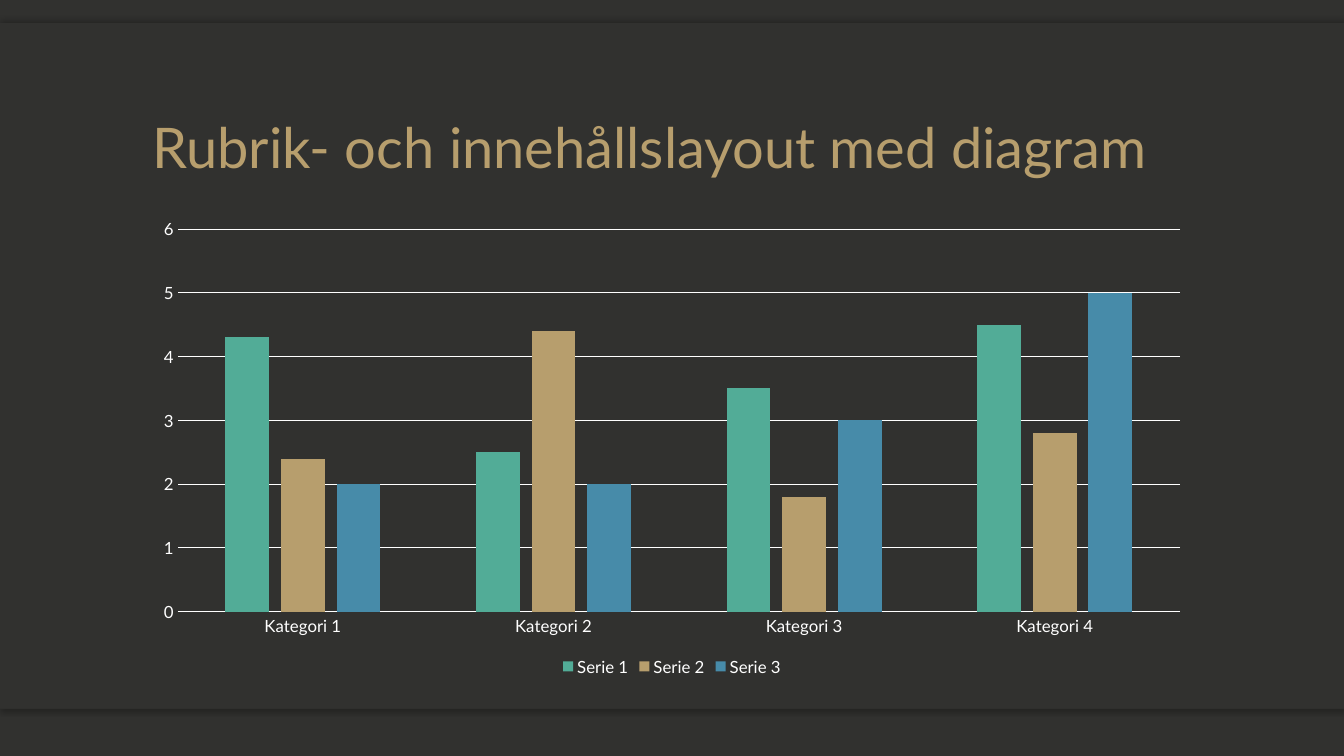
from lxml import etree
from pptx import Presentation
from pptx.chart.data import CategoryChartData
from pptx.dml.color import RGBColor
from pptx.enum.chart import XL_CHART_TYPE, XL_LEGEND_POSITION, XL_TICK_MARK
from pptx.enum.shapes import MSO_SHAPE
from pptx.enum.text import MSO_ANCHOR
from pptx.oxml.ns import qn
from pptx.util import Inches, Pt

TITLE = "Rubrik- och innehållslayout med diagram"
CATEGORIES = ["Kategori 1", "Kategori 2", "Kategori 3", "Kategori 4"]
SERIES = [
    ("Serie 1", (4.3, 2.5, 3.5, 4.5), "green"),
    ("Serie 2", (2.4, 4.4, 1.8, 2.8), "gold"),
    ("Serie 3", (2, 2, 3, 5), "blue"),
]
COLORS = {
    "background": "31312F", "shadow": "000000", "white": "FFFFFF",
    "green": "52AC97", "gold": "B79E6D", "blue": "478BA9",
}
FONT = "Lato"

SLIDE_WIDTH, SLIDE_HEIGHT = 13.33, 7.5
PANEL_TOP, PANEL_HEIGHT, EDGE_HEIGHT = 0.23, 6.8, 0.49
CONTENT_WIDTH = 10.5
CONTENT_LEFT = (SLIDE_WIDTH - CONTENT_WIDTH) / 2
# top, height, direction of the shadow in degrees
BANDS = [
    (PANEL_TOP + PANEL_HEIGHT - EDGE_HEIGHT, EDGE_HEIGHT, 90),
    (PANEL_TOP, EDGE_HEIGHT, 270),
    (PANEL_TOP, PANEL_HEIGHT, None),
]


def color(name):
    return RGBColor.from_string(COLORS[name])


def style_font(font, size, color_name):
    for key, value in {"name": FONT, "size": Pt(size)}.items():
        setattr(font, key, value)
    font.color.rgb = color(color_name)


def style_line(line, color_name):
    line.color.rgb = color(color_name)
    line.width = Pt(0.75)


def add_shadow(shape, direction):
    effects = shape._element.spPr.find(qn("a:effectLst"))
    shadow = etree.SubElement(
        effects, qn("a:outerShdw"), blurRad=str(Pt(4)), dist=str(Pt(2)),
        dir=str(direction * 60000), algn="ctr", rotWithShape="0")
    tone = etree.SubElement(shadow, qn("a:srgbClr"), val=COLORS["shadow"])
    etree.SubElement(tone, qn("a:alpha"), val="25000")


def add_bands(slide):
    for top, height, direction in BANDS:
        band = slide.shapes.add_shape(
            MSO_SHAPE.RECTANGLE, 0, Inches(top), Inches(SLIDE_WIDTH), Inches(height))
        band.fill.solid()
        band.fill.fore_color.rgb = color("background")
        band.line.fill.background()
        band.shadow.inherit = False
        if direction is not None:
            add_shadow(band, direction)


def add_title(slide):
    box = slide.shapes.add_textbox(
        Inches(CONTENT_LEFT), Inches(0.46), Inches(CONTENT_WIDTH), Inches(1.38))
    frame = box.text_frame
    frame.word_wrap = True
    frame.vertical_anchor = MSO_ANCHOR.BOTTOM
    paragraph = frame.paragraphs[0]
    paragraph.line_spacing = 0.9
    run = paragraph.add_run()
    run.text = TITLE
    style_font(run.font, 40, "gold")


def add_column_chart(slide):
    data = CategoryChartData()
    data.categories = CATEGORIES
    for name, values, _ in SERIES:
        data.add_series(name, values)
    chart = slide.shapes.add_chart(
        XL_CHART_TYPE.COLUMN_CLUSTERED, Inches(CONTENT_LEFT), Inches(2.08),
        Inches(CONTENT_WIDTH), Inches(4.67), data).chart
    style_font(chart.font, 10, "white")
    chart.has_title = False

    plot = chart.plots[0]
    for key, value in {"gap_width": 219, "overlap": -27, "vary_by_categories": False}.items():
        setattr(plot, key, value)
    for series, (_, _, color_name) in zip(plot.series, SERIES):
        series.format.fill.solid()
        series.format.fill.fore_color.rgb = color(color_name)

    for axis in (chart.category_axis, chart.value_axis):
        axis.major_tick_mark = axis.minor_tick_mark = XL_TICK_MARK.NONE
        style_font(axis.tick_labels.font, 12, "white")
    style_line(chart.category_axis.format.line, "white")
    chart.value_axis.format.line.fill.background()
    chart.value_axis.has_major_gridlines = True
    style_line(chart.value_axis.major_gridlines.format.line, "white")
    for key, value in {"minimum_scale": 0, "maximum_scale": 6, "major_unit": 1}.items():
        setattr(chart.value_axis, key, value)

    chart.has_legend = True
    chart.legend.position = XL_LEGEND_POSITION.BOTTOM
    chart.legend.include_in_layout = False
    style_font(chart.legend.font, 12, "white")


def main():
    presentation = Presentation()
    presentation.slide_width = Inches(SLIDE_WIDTH)
    presentation.slide_height = Inches(SLIDE_HEIGHT)
    slide = presentation.slides.add_slide(presentation.slide_layouts[6])
    slide.background.fill.solid()
    slide.background.fill.fore_color.rgb = color("background")
    add_bands(slide)
    add_title(slide)
    add_column_chart(slide)
    presentation.save("out.pptx")


if __name__ == "__main__":
    main()
